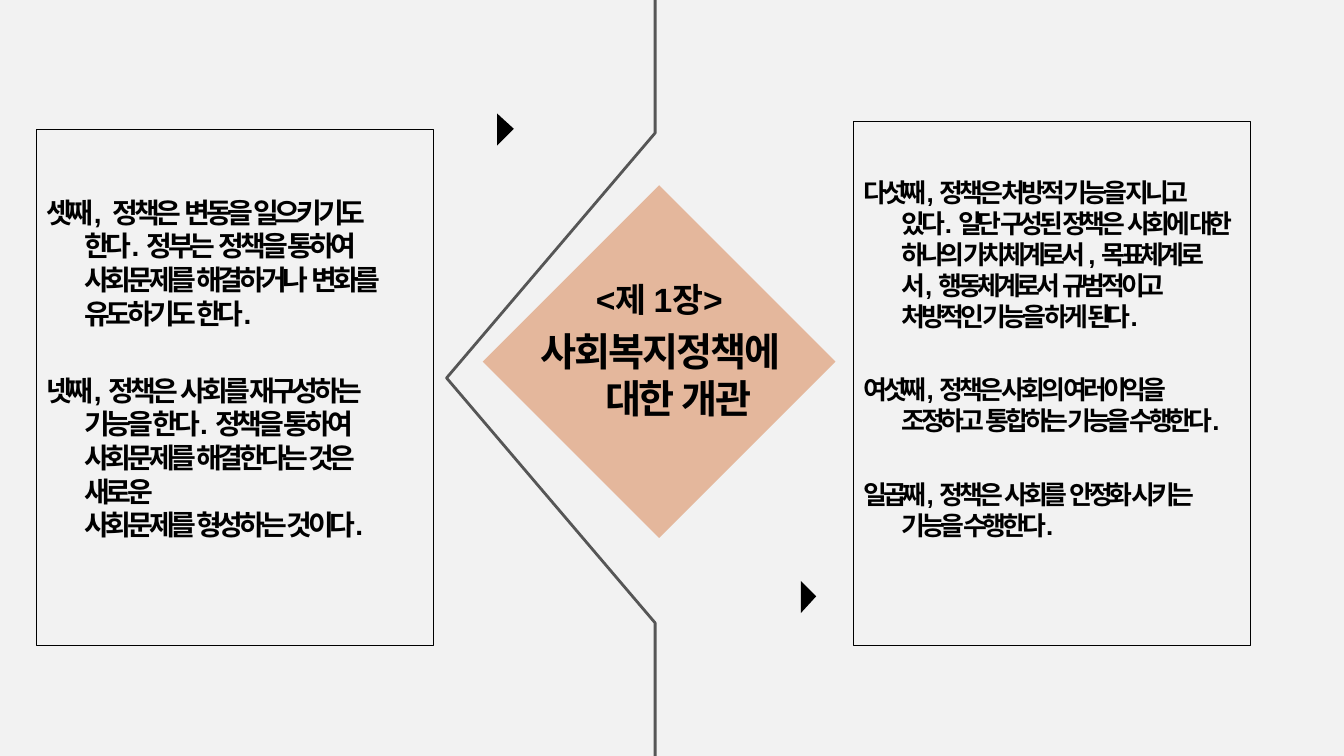
from lxml.etree import SubElement
from pptx import Presentation
from pptx.dml.color import RGBColor
from pptx.enum.shapes import MSO_SHAPE
from pptx.enum.text import MSO_ANCHOR, PP_ALIGN
from pptx.oxml.ns import qn
from pptx.util import Pt

BLACK = RGBColor(0x00, 0x00, 0x00)
GRAY = RGBColor(0x56, 0x56, 0x56)
PEACH = RGBColor(0xE4, 0xB7, 0x9C)
PAPER = RGBColor(0xF2, 0xF2, 0xF2)

FONT = "Arial"
HANGING = 27

# left, top, width, height, text offset, size, paragraph gap, paragraphs of lines
PANELS = [
    (26, 92.2, 283.7, 368.8, 47.3, 20, 31, [
        ["셋째,   정책은  변동을 일으키기도",
         "한다.  정부는  정책을 통하여",
         "사회문제를 해결하거나  변화를",
         "유도하기도 한다."],
        ["넷째,  정책은  사회를 재구성하는",
         "기능을 한다.  정책을 통하여",
         "사회문제를 해결한다는 것은  새로운",
         "사회문제를 형성하는 것이다."],
    ]),
    (609.8, 87, 283.7, 374, 39, 18.5, 30, [
        ["다섯째,  정책은 처방적 기능을 지니고",
         "있다.  일단 구성된 정책은  사회에 대한",
         "하나의 가치체계로서 ,  목표체계로",
         "서,  행동체계로서  규범적이고",
         "처방적인 기능을 하게 된다."],
        ["여섯째,  정책은 사회의 여러이익을",
         "조정하고  통합하는 기능을 수행한다."],
        ["일곱째,  정책은  사회를  안정화 시키는",
         "기능을 수행한다."],
    ]),
]
TITLE = [(["<제 1장>"], 24), (["사회복지정책에 대한 개관"], 28)]
TITLE_BOX = (363.6, 152.6, 214.6, 194.4)
TITLE_OFFSET = 46.8
DIAMOND = (344.8, 132.3, 252, 252)
SPINE = [(468, 0), (468, 95), (319, 270), (468, 445), (468, 540)]
MARKERS = [(355, 92.2), (571.8, 426.2)]  # middle of each left edge
MARKER_WIDTH, MARKER_HEIGHT = 11.6, 23.2


def add_text(tf, paragraphs, *, offset, gap, spacing, align):
    """Fill a frame with (lines, size) paragraphs, the first one offset from the top."""
    tf.word_wrap = True
    tf.vertical_anchor = MSO_ANCHOR.TOP
    tf.margin_top = Pt(offset)
    for i, (lines, size) in enumerate(paragraphs):
        p = tf.paragraphs[0] if i == 0 else tf.add_paragraph()
        p.alignment = align
        p.space_before = Pt(gap if i else 0)
        pPr = p._p.get_or_add_pPr()
        pPr.set("marL", str(Pt(HANGING)))
        pPr.set("indent", str(-Pt(HANGING)))
        for j, line in enumerate(lines):
            if j:
                p.add_line_break()
            r = p.add_run()
            r.text = line
            r.font.name = FONT
            r.font.size = Pt(size)
            r.font.bold = True
            r.font.color.rgb = BLACK
            rPr = r._r.get_or_add_rPr()
            rPr.set("lang", "ko-KR")
            rPr.set("spc", str(int(spacing * 100)))
            SubElement(rPr, qn("a:ea")).set("typeface", FONT)
        for br in p._p.findall(qn("a:br")):
            SubElement(br, qn("a:rPr")).set("sz", str(int(size * 100)))


def style(sp, fill=None, line=None, width=0.75):
    sp.shadow.inherit = False
    if fill is None:
        sp.fill.background()
    else:
        sp.fill.solid()
        sp.fill.fore_color.rgb = fill
    if line is None:
        sp.line.fill.background()
    else:
        sp.line.color.rgb = line
        sp.line.width = Pt(width)


def add_outline(s, points, close):
    builder = s.shapes.build_freeform(*points[0], scale=Pt(1))
    builder.add_line_segments(points[1:], close=close)
    return builder.convert_to_shape()


def main():
    prs = Presentation()
    prs.slide_width, prs.slide_height = Pt(960), Pt(540)
    s = prs.slides.add_slide(prs.slide_layouts[6])
    s.background.fill.solid()
    s.background.fill.fore_color.rgb = PAPER

    style(add_outline(s, SPINE, False), line=GRAY, width=2)
    diamond = s.shapes.add_shape(MSO_SHAPE.DIAMOND, *map(Pt, DIAMOND))
    style(diamond, fill=PEACH)

    for x, y in MARKERS:
        half = MARKER_HEIGHT / 2
        triangle = [(x, y - half), (x + MARKER_WIDTH, y), (x, y + half)]
        style(add_outline(s, triangle, True), fill=BLACK)

    for *box, offset, size, gap, texts in PANELS:
        panel = s.shapes.add_shape(MSO_SHAPE.RECTANGLE, *map(Pt, box))
        style(panel, line=BLACK)
        add_text(panel.text_frame, [(lines, size) for lines in texts],
                 offset=offset, gap=gap, spacing=-3, align=PP_ALIGN.LEFT)

    title = s.shapes.add_textbox(*map(Pt, TITLE_BOX))
    add_text(title.text_frame, TITLE, offset=TITLE_OFFSET, gap=5.6,
             spacing=-1.5, align=PP_ALIGN.CENTER)
    prs.save("out.pptx")


if __name__ == "__main__":
    main()
